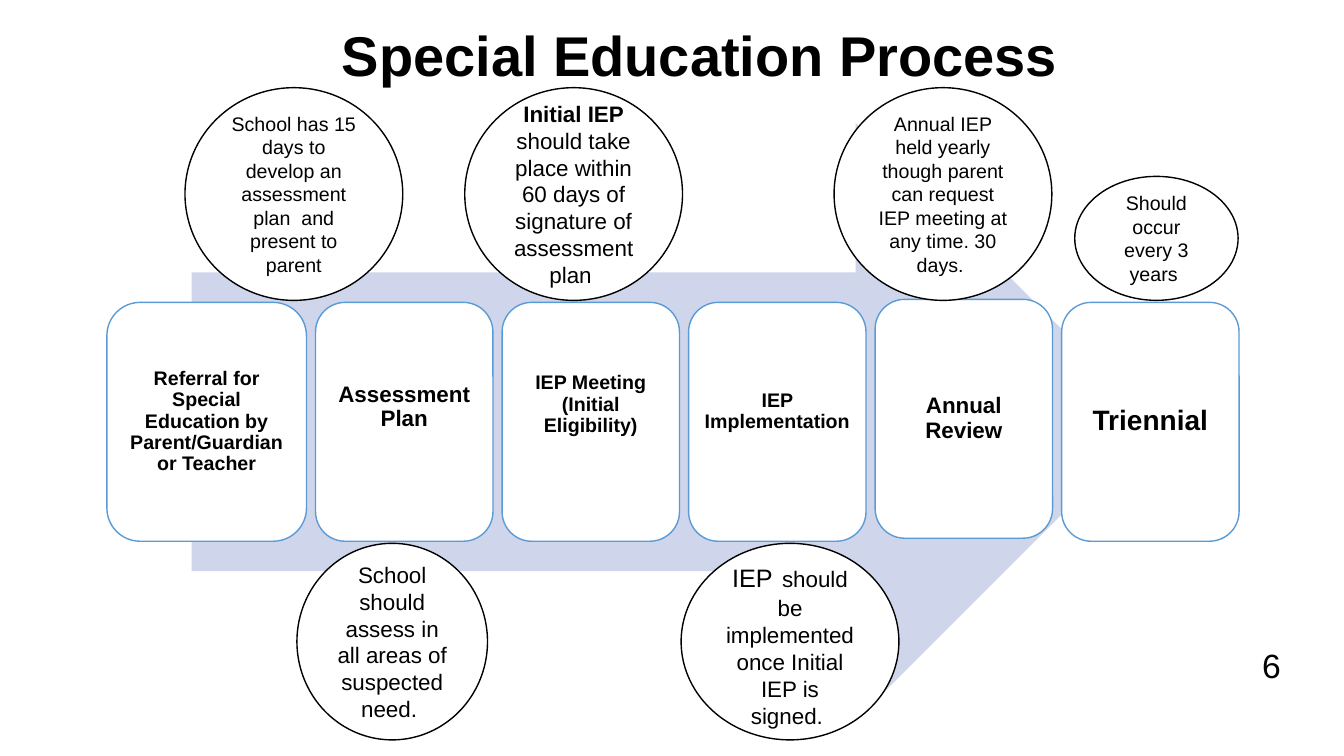
from pptx import Presentation
from pptx.dml.color import RGBColor
from pptx.enum.shapes import MSO_SHAPE as Shape
from pptx.enum.text import MSO_ANCHOR as Anchor, MSO_AUTO_SIZE as AutoSize, PP_ALIGN as Align
from pptx.util import Inches, Pt

WHITE = RGBColor(0xFF, 0xFF, 0xFF)
BLACK = RGBColor(0x00, 0x00, 0x00)
CARD_BLUE = RGBColor(0x5B, 0x9B, 0xD5)
ARROW_BLUE = RGBColor(0xCF, 0xD5, 0xEA)

FONT = "Arial"
TITLE_ONLY = 5
GRID_LEFT, COLUMN = 1.28, 1.85
CARD_TOP, CARD_WIDTH, CARD_HEIGHT = 3.0, 1.76, 2.37
BUBBLE_BASE, BUBBLE_CEILING = 2.98, 5.39

# text, font size, left widening, upward shift of the card, extra bottom inset
STEPS = [
    ("Referral for Special Education by Parent/Guardian or Teacher", 14, 0.22, 0, 0),
    ("Assessment Plan", 16, 0, 0, 0.29),
    ("IEP Meeting (Initial Eligibility)", 14, 0, 0, 0.34),
    ("IEP Implementation", 14, 0, 0, 0.2),
    ("Annual Review", 16, 0, 0.03, 0),
    ("Triennial", 20, 0, 0, 0),
]

# left edge in columns, width, height, above the cards, spans of (text, size, bold)
BUBBLES = [
    (0.3, 2.16, 2.11, True,
     [("School has 15 days to develop an assessment plan  and present to parent", 14, False)]),
    (0.9, 1.89, 1.95, False,
     [("School should assess in all areas of suspected need. ", 16, False)]),
    (1.8, 2.16, 2.11, True,
     [("Initial IEP", 16, True),
      (" should take place within 60 days of signature of assessment plan ", 16, False)]),
    (2.96, 2.16, 1.95, False,
     [("IEP", 18, False), (" ", 24, False),
      ("should be implemented once Initial IEP is signed. ", 16, False)]),
    (5.07, 1.62, 1.23, True, [("Should occur every 3 years ", 14, False)]),
    (3.78, 2.16, 2.11, True,
     [("Annual IEP held yearly though parent can request IEP meeting at any time. 30 days. ",
       14, False)]),
]


def column_left(column):
    return GRID_LEFT + COLUMN * column


def style_font(font, size, bold=False):
    font.name = FONT
    font.size = Pt(size)
    font.bold = bold
    font.color.rgb = BLACK


def add_panel(page, kind, left, top, width, height, fill, line=None):
    panel = page.shapes.add_shape(
        kind, Inches(left), Inches(top), Inches(width), Inches(height))
    panel.shadow.inherit = False
    panel.fill.solid()
    panel.fill.fore_color.rgb = fill
    if line is None:
        panel.line.fill.background()
    else:
        panel.line.color.rgb = line
        panel.line.width = Pt(1)
    panel.text_frame.word_wrap = True
    panel.text_frame.vertical_anchor = Anchor.MIDDLE
    panel.text_frame.paragraphs[0].alignment = Align.CENTER
    return panel


def add_card(page, column, text, size, widening, lift, bottom_extra):
    card = add_panel(page, Shape.ROUNDED_RECTANGLE,
                     column_left(column) - widening, CARD_TOP - lift,
                     CARD_WIDTH + widening, CARD_HEIGHT, WHITE, CARD_BLUE)
    frame = card.text_frame
    frame.margin_left = frame.margin_right = frame.margin_top = Inches(0.06)
    frame.margin_bottom = Inches(0.06 + bottom_extra)
    para = frame.paragraphs[0]
    para.text = text
    para.line_spacing = 0.9
    style_font(para.font, size, bold=True)


def add_bubble(page, column, width, height, above, spans):
    top = BUBBLE_BASE - height if above else BUBBLE_CEILING
    bubble = add_panel(page, Shape.OVAL, column_left(column), top,
                       width, height, WHITE, BLACK)
    para = bubble.text_frame.paragraphs[0]
    for text, size, bold in spans:
        span = para.add_run()
        span.text = text
        style_font(span.font, size, bold)


def place_label(box, text, size, bold, left, top, width, height):
    box.left, box.top = Inches(left), Inches(top)
    box.width, box.height = Inches(width), Inches(height)
    frame = box.text_frame
    frame.word_wrap = False
    frame.auto_size = AutoSize.NONE
    frame.vertical_anchor = Anchor.TOP
    para = frame.paragraphs[0]
    para.text = text
    para.alignment = Align.LEFT
    style_font(para.font, size, bold)


def main():
    deck = Presentation()
    deck.slide_width, deck.slide_height = Inches(13.33), Inches(7.5)
    page = deck.slides.add_slide(deck.slide_layouts[TITLE_ONLY])

    place_label(page.shapes.title, "Special Education Process", 40, True,
                3.29, 0.15, 7.37, 0.77)
    add_panel(page, Shape.RIGHT_ARROW, 1.9, 1.22, 9.55, 5.93, ARROW_BLUE)
    for column, step in enumerate(STEPS):
        add_card(page, column, *step)
    for bubble in BUBBLES:
        add_bubble(page, *bubble)
    page_number = page.shapes.add_textbox(0, 0, 0, 0)
    place_label(page_number, "6", 24, False, 12.42, 6.35, 0.39, 0.5)

    deck.save("out.pptx")


if __name__ == "__main__":
    main()
